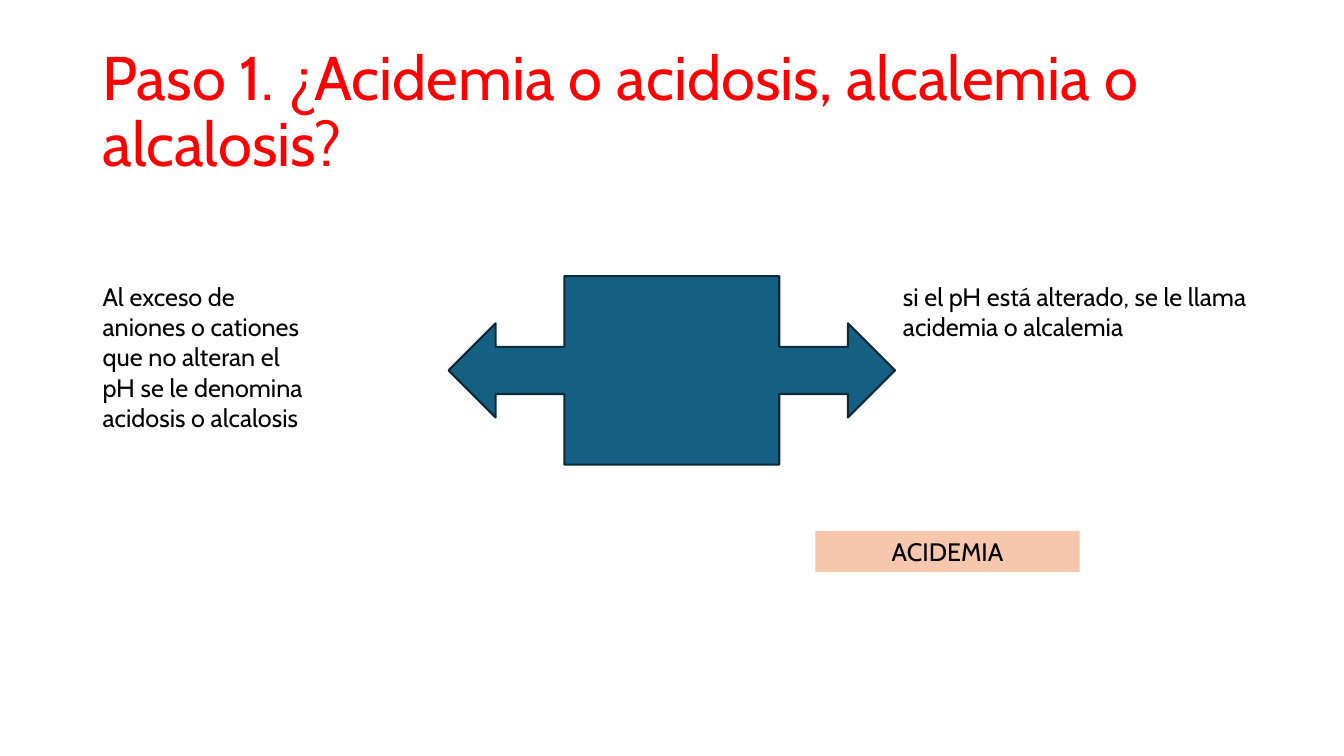
from pptx import Presentation
from pptx import util as u
from pptx.dml.color import RGBColor
from pptx.enum import shapes, text

Pt = u.Pt

THEME = {
    "font": "Cabin",
    "title_size": 44,
    "body_size": 18,
    "title": "FF0000",
    "ink": "000000",
    "callout": "156082",
    "outline": "092A39",
    "label": "F6C6AD",
}

LEFT_EDGE, ROW_TOP = 66.24, 197.28

TEXTS = [
    {"wording": "Paso 1. ¿Acidemia o acidosis, alcalemia o alcalosis?",
     "place": (LEFT_EDGE, 28.8, 828, 104.4), "size": "title_size", "ink": "title",
     "frame": {"vertical_anchor": text.MSO_ANCHOR.MIDDLE},
     "paragraph": {"line_spacing": 0.9}},
    {"wording": "Al exceso de aniones o cationes que no alteran el pH "
                "se le denomina acidosis o alcalosis",
     "place": (LEFT_EDGE, ROW_TOP, 166.32, 116.64)},
    {"wording": "si el pH está alterado, se le llama acidemia o alcalemia",
     "place": (637.92, ROW_TOP, 311.04, 51.12)},
    {"wording": "ACIDEMIA",
     "place": (582.48, 379.44, 188.64, 29.08), "fill": "label",
     "paragraph": {"alignment": text.PP_ALIGN.CENTER}},
]

CALLOUT_PLACE = (320.4, ROW_TOP, 318.96, 134.64)


def color(role):
    return RGBColor.from_string(THEME[role])


def apply(target, values):
    for name, value in values.items():
        setattr(target, name, value)


def paint(shape, role):
    shape.fill.solid()
    shape.fill.fore_color.rgb = color(role)


def add_callout(slide):
    callout = slide.shapes.add_shape(
        shapes.MSO_SHAPE.LEFT_RIGHT_ARROW_CALLOUT, *map(Pt, CALLOUT_PLACE))
    callout.shadow.inherit = False
    paint(callout, "callout")
    callout.line.color.rgb = color("outline")
    callout.line.width = Pt(1.5)


def add_text(slide, entry):
    box = slide.shapes.add_textbox(*map(Pt, entry["place"]))
    if "fill" in entry:
        paint(box, entry["fill"])
    frame = box.text_frame
    apply(frame, {"word_wrap": True, **entry.get("frame", {})})
    paragraph = frame.paragraphs[0]
    apply(paragraph, entry.get("paragraph", {}))
    wording = paragraph.add_run()
    wording.text = entry["wording"]
    apply(wording.font, {"name": THEME["font"],
                         "size": Pt(THEME[entry.get("size", "body_size")])})
    wording.font.color.rgb = color(entry.get("ink", "ink"))


def main():
    deck = Presentation()
    apply(deck, {"slide_width": Pt(960), "slide_height": Pt(540)})
    slide = deck.slides.add_slide(deck.slide_layouts[6])
    add_callout(slide)
    for entry in TEXTS:
        add_text(slide, entry)
    deck.save("out.pptx")


if __name__ == "__main__":
    main()
